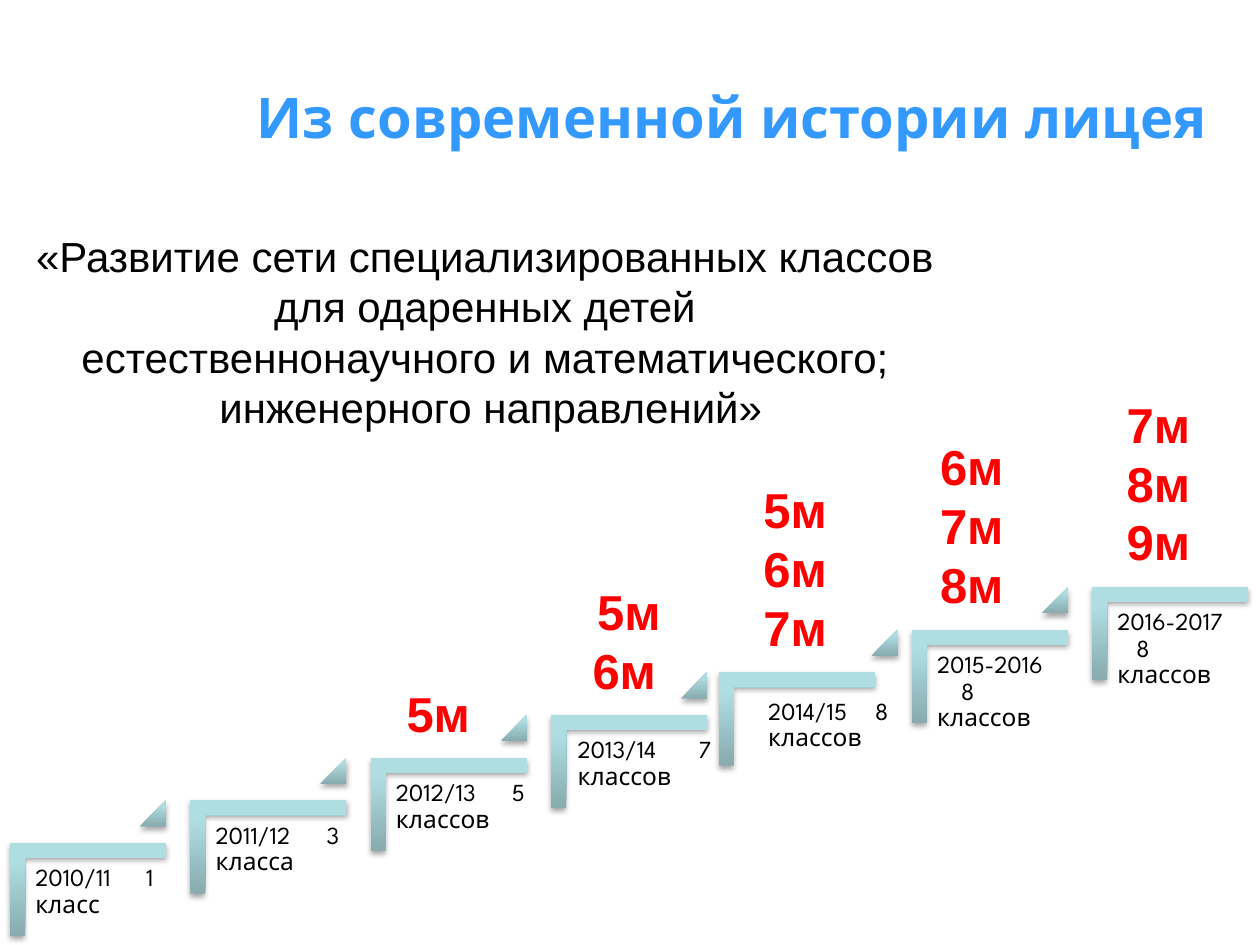
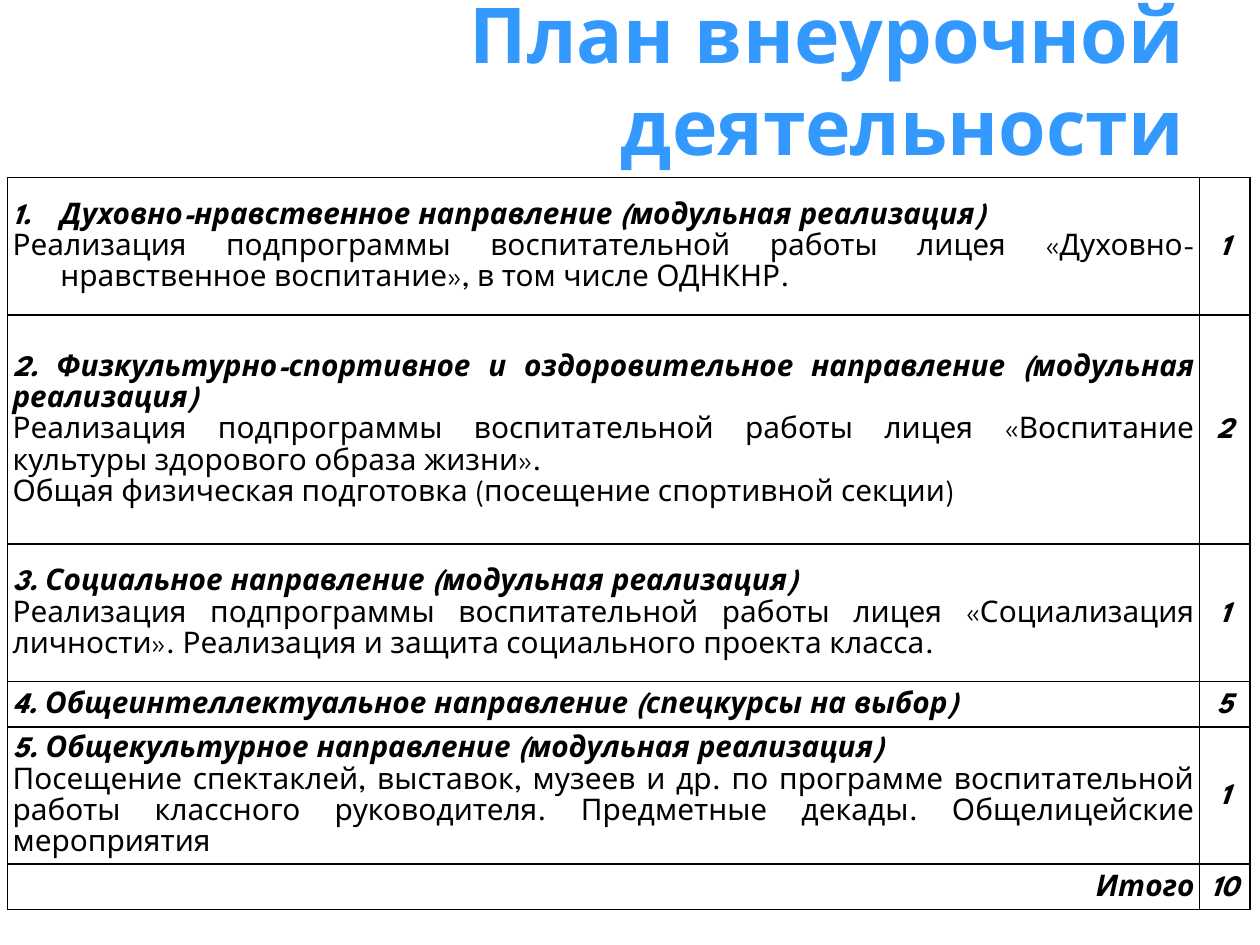
import pptx
import pptx.dml.color
import pptx.enum.shapes
import pptx.enum.text
import pptx.oxml
import pptx.oxml.ns
import pptx.util
from dataclasses import dataclass

W, H = 10, 7.5
C = {"title": "3399FF", "text": "000000", "accent": "FF0000",
     "step_dark": "87ABAE", "step_mid": "AFDEE2", "step_light": "AFE0E4"}
HEAD, BODY = "League Spartan", "Arial"
ALIGN = pptx.enum.text.PP_ALIGN
AUTO = pptx.enum.text.MSO_AUTO_SIZE
MIDDLE = pptx.enum.text.MSO_ANCHOR.MIDDLE
SHAPE = pptx.enum.shapes.MSO_SHAPE
NS = pptx.oxml.ns.nsdecls("a")


@dataclass
class Step:
    """One school year on the staircase."""
    lines: tuple
    tab: float
    grades: tuple = ()
    grades_x: float = 0
    grades_w: float = 0.71
    shift: float = 0
    label_x: float = 0.14
    label_y: float = 0.12
    label_w: float = 1.25
    mark_x: float = 1.03


STEPS = [
    Step(("2010/11\t1", "класс"), 0.88),
    Step(("2011/12\t3", "класса"), 0.88),
    Step(("2012/13\t5", "классов"), 0.92, ("5м",), 0.18),
    Step(("2013/14\t7", "классов"), 0.96, ("5м ", "6м"), 0.23, 0.88,
         label_x=0.15, label_w=1.29),
    Step(("2014/15\t8", "классов"), 0.85, ("5м", "6м", "7м"), 0.25, shift=-0.1,
         label_x=0.33, label_y=0.15, label_w=1.51, mark_x=1.21),
    Step(("2015-2016", "\t8", "классов"), 0.19, ("6м", "7м", "8м"), 0.12, label_w=1.12),
    Step(("2016-2017", "\t8", "классов"), 0.15, ("7м", "8м", "9м"), 0.17, label_w=1.12),
]

PROGRAM = [
    "«Развитие сети специализированных классов ",
    "для одаренных детей ",
    "естественнонаучного и математического; ",
    "инженерного направлений»",
]

PLAN = [
    (["Духовно-нравственное направление (модульная реализация)",
      "Реализация подпрограммы воспитательной работы лицея "
      "«Духовно-нравственное воспитание», в том числе ОДНКНР."], "1", 1.09),
    (["2. Физкультурно-спортивное и оздоровительное направление (модульная реализация)",
      "Реализация подпрограммы воспитательной работы лицея "
      "«Воспитание культуры здорового образа жизни».",
      "Общая физическая подготовка (посещение спортивной секции)"], "2", 1.82),
    (["3. Социальное направление (модульная реализация)",
      "Реализация подпрограммы воспитательной работы лицея «Социализация личности». "
      "Реализация и защита социального проекта класса."], "1", 1.09),
    (["4. Общеинтеллектуальное направление (спецкурсы на выбор)"], "5", 0.36),
    (["5. Общекультурное направление (модульная реализация)",
      "Посещение спектаклей, выставок, музеев и др. по программе воспитательной работы "
      "классного руководителя. Предметные декады. Общелицейские мероприятия"], "1", 1.09),
    (["Итого"], "10", 0.36),
]


def inches(*values):
    """Convert several lengths to EMU."""
    return [pptx.util.Inches(v) for v in values]


def add_run(p, text, size, font=HEAD, color="text", bold=False, italic=False):
    """Append one formatted run."""
    r = p.add_run()
    r.text = text
    f = r.font
    f.name, f.size, f.bold, f.italic = font, pptx.util.Pt(size), bold, italic
    f.color.rgb = pptx.dml.color.RGBColor.from_string(C[color])


def paragraph(tf, index):
    """Return the paragraph at the index, adding all but the first."""
    return tf.paragraphs[0] if index == 0 else tf.add_paragraph()


def add_title(s, text, size, box):
    """Place and format the title."""
    sp = s.shapes.title
    sp.left, sp.top, sp.width, sp.height = inches(*box)
    tf = sp.text_frame
    tf.auto_size, tf.vertical_anchor, tf.word_wrap = AUTO.NONE, MIDDLE, True
    p = tf.paragraphs[0]
    p.alignment = ALIGN.RIGHT
    add_run(p, text, size, color="title", bold=True)


def add_lines(s, box, lines, size, aligns, wrap, color="text", bold=False):
    """Add a text box with one paragraph a line."""
    tf = s.shapes.add_textbox(*inches(*box)).text_frame
    tf.word_wrap, tf.auto_size = wrap, AUTO.SHAPE_TO_FIT_TEXT
    for i, line in enumerate(lines):
        p = paragraph(tf, i)
        p.alignment = aligns[i]
        add_run(p, line, size, BODY, color, bold)


def add_relief(s, kind, box, adjustments, rotation=0):
    """Add a shape with the staircase gradient and soft shadow."""
    sp = s.shapes.add_shape(kind, *inches(*box))
    sp.rotation = rotation
    for i, value in enumerate(adjustments):
        sp.adjustments[i] = value
    sp.fill.background()
    sp.line.fill.background()
    sp.shadow.inherit = False
    stops = "".join(f'<a:gs pos="{pos}"><a:srgbClr val="{C[key]}"/></a:gs>' for pos, key in
                    ((0, "step_dark"), (80000, "step_mid"), (100000, "step_light")))
    pr = sp.element.spPr
    pr.replace(pr.find(pptx.oxml.ns.qn("a:noFill")), pptx.oxml.parse_xml(
        f'<a:gradFill {NS} rotWithShape="0"><a:gsLst>{stops}</a:gsLst>'
        '<a:lin ang="16200000" scaled="0"/></a:gradFill>'))
    pr.find(pptx.oxml.ns.qn("a:effectLst")).append(pptx.oxml.parse_xml(
        f'<a:outerShdw {NS} blurRad="40000" dist="23000" dir="5400000" rotWithShape="0">'
        '<a:srgbClr val="000000"><a:alpha val="35000"/></a:srgbClr></a:outerShdw>'))


def add_label(s, box, step):
    """Write the year and the number of classes under a step."""
    tf = s.shapes.add_textbox(*inches(*box)).text_frame
    tf.word_wrap = True
    tf.margin_left = tf.margin_right = tf.margin_top = tf.margin_bottom = pptx.util.Inches(0.06)
    p = tf.paragraphs[0]
    p.line_spacing = 0.9
    p._p.get_or_add_pPr().append(pptx.oxml.parse_xml(
        f'<a:tabLst {NS}><a:tab pos="{pptx.util.Inches(step.tab)}" algn="l"/></a:tabLst>'))
    for i, line in enumerate(step.lines):
        if i:
            p.add_line_break()
        add_run(p, line, 14)


def add_staircase(s, box):
    """Draw the rising steps with their labels and grades."""
    left, top, width, height = box
    run, depth = 1.24, 0.74
    col = width / len(STEPS)
    rise = (height - depth) / (len(STEPS) - 1)
    turn = (run - depth) / 2
    for i, step in enumerate(STEPS):
        x = left + i * col + step.shift
        y = top + height - depth - i * rise
        add_relief(s, SHAPE.CORNER, (x + turn, y - turn, depth, run), (0.16, 0.16), 90)
        add_label(s, (x + step.label_x, y + step.label_y, step.label_w, 0.98), step)
        if i < len(STEPS) - 1:
            add_relief(s, SHAPE.ISOSCELES_TRIANGLE,
                       (x + step.mark_x, y - 0.34, 0.21, 0.21), (1,))
        if step.grades:
            tall = 0.1 + 0.47 * len(step.grades)
            aligns = [ALIGN.CENTER] * len(step.grades)
            if len(aligns) == 2:
                aligns[1] = ALIGN.LEFT
            add_lines(s, (x + step.grades_x, y - 0.07 - tall, step.grades_w, tall),
                      step.grades, 28, aligns, False, "accent", True)


def fill_cell(cell, lines, align, numbered=False):
    """Write a bordered cell whose first line is a bold italic heading."""
    cell.fill.background()
    cell.vertical_anchor = MIDDLE
    cell.margin_left = cell.margin_right = pptx.util.Inches(0.04)
    cell.margin_top = cell.margin_bottom = 0
    for i, line in enumerate(lines):
        p = paragraph(cell.text_frame, i)
        p.alignment, p.line_spacing = align, 1.15
        add_run(p, line, 17, bold=i == 0, italic=i == 0)
        if numbered:
            pr = p._p.get_or_add_pPr()
            indent = pptx.util.Inches(0.38)
            pr.set("marL", str(indent))
            pr.set("indent", str(-indent))
            if i == 0:
                pr.append(pptx.oxml.parse_xml(f'<a:buAutoNum {NS} type="arabicPeriod"/>'))
    for i, side in enumerate(("lnL", "lnR", "lnT", "lnB")):
        cell._tc.get_or_add_tcPr().insert(i, pptx.oxml.parse_xml(
            f'<a:{side} {NS} w="12700"><a:solidFill><a:srgbClr val="{C["text"]}"/>'
            f'</a:solidFill></a:{side}>'))


def add_plan(s, box):
    """Add the table of activities and weekly hours."""
    left, top, width, height = box
    hours_w = 0.4
    table = s.shapes.add_table(len(PLAN), 2, *inches(left, top, width, height)).table
    table.first_row = table.horz_banding = False
    table.columns[0].width, table.columns[1].width = inches(width - hours_w, hours_w)
    for i, (lines, hours, tall) in enumerate(PLAN):
        table.rows[i].height = pptx.util.Inches(tall)
        last = i == len(PLAN) - 1
        fill_cell(table.cell(i, 0), lines, ALIGN.RIGHT if last else ALIGN.JUSTIFY, i == 0)
        fill_cell(table.cell(i, 1), [hours], ALIGN.CENTER)


def history_slide(prs):
    """Build the slide with the staircase of school years."""
    s = prs.slides.add_slide(prs.slide_layouts[5])
    add_title(s, "Из современной истории лицея ", 32, (0.08 * W, 0.04 * H, 0.9 * W, H / 6))
    add_staircase(s, (0.08, 4.66, W + 0.02, 2.77))
    add_lines(s, (-0.83, 1.78, 9.45, 1.72), PROGRAM, 24, [ALIGN.CENTER] * len(PROGRAM), True)


def plan_slide(prs):
    """Build the slide with the activity plan."""
    s = prs.slides.add_slide(prs.slide_layouts[5])
    add_title(s, "План внеурочной деятельности", 44, (0.05 * W, 0, 0.9 * W, H / 6))
    add_plan(s, (0.06, 1.41, 9.86, sum(row[2] for row in PLAN)))


def main():
    """Build and save the presentation."""
    prs = pptx.Presentation()
    prs.slide_width, prs.slide_height = inches(W, H)
    history_slide(prs)
    plan_slide(prs)
    prs.save("out.pptx")


if __name__ == "__main__":
    main()
